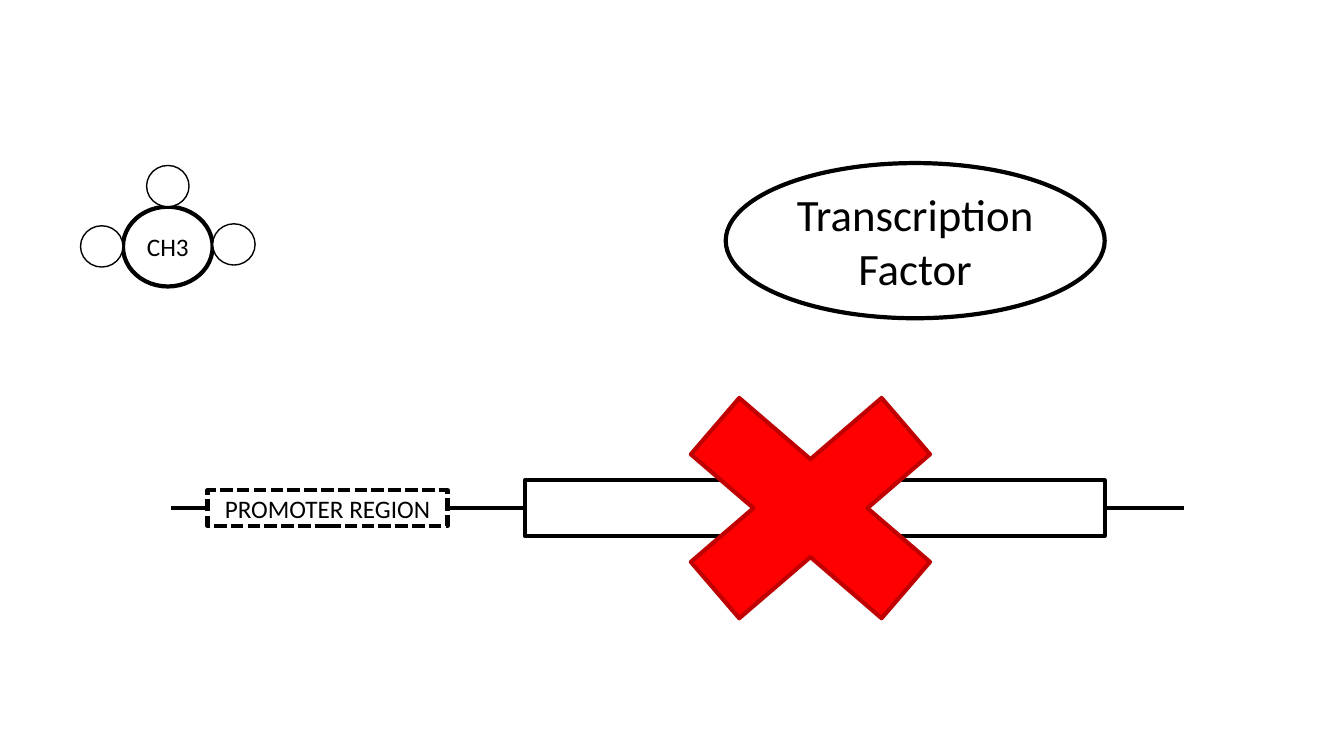
from lxml import etree
from pptx import Presentation
from pptx.dml.color import RGBColor
from pptx.enum.dml import MSO_LINE
from pptx.enum.shapes import MSO_CONNECTOR, MSO_SHAPE
from pptx.enum.text import MSO_ANCHOR, PP_ALIGN
from pptx.oxml.ns import qn
from pptx.util import Cm, Pt

RECT = MSO_SHAPE.RECTANGLE
OVAL = MSO_SHAPE.OVAL
CROSS = MSO_SHAPE.MATH_MULTIPLY
STRAIGHT = MSO_CONNECTOR.STRAIGHT
DASH = MSO_LINE.SQUARE_DOT
MIDDLE = MSO_ANCHOR.MIDDLE
CENTER = PP_ALIGN.CENTER

BLACK = RGBColor(0x00, 0x00, 0x00)
WHITE = RGBColor(0xFF, 0xFF, 0xFF)
RED = RGBColor(0xFF, 0x00, 0x00)
DARK_RED = RGBColor(0xC0, 0x00, 0x00)


def add_outlined(s, kind, x, y, w, h, fill=WHITE, line=BLACK, weight=3):
    sp = s.shapes.add_shape(kind, Cm(x), Cm(y), Cm(w), Cm(h))
    sp.shadow.inherit = False
    if fill is None:
        sp.fill.background()
    else:
        sp.fill.solid()
        sp.fill.fore_color.rgb = fill
    sp.line.color.rgb = line
    sp.line.width = Pt(weight)
    return sp


def set_label(sp, text, size, inset=0):
    tf = sp.text_frame
    tf.text = text
    tf.word_wrap = True
    tf.vertical_anchor = MIDDLE
    tf.margin_left = tf.margin_right = Cm(inset)
    tf.margin_top = tf.margin_bottom = 0
    p = tf.paragraphs[0]
    p.alignment = CENTER
    font = p.runs[0].font
    font.name = "Calibri"
    font.size = Pt(size)
    font.color.rgb = BLACK


def add_methyl_group(s, x, y):
    atom_w, atom_h = 1.07, 1.04
    core_w, core_h = 2.26, 2.01
    core = add_outlined(s, OVAL, x + atom_w, y + atom_h, core_w, core_h)
    set_label(core, "CH3", 18)
    top_x = (atom_w + core_w) / 2
    for dx, dy in ((atom_w + core_w, 1.47), (top_x, 0), (0, 1.52)):
        add_outlined(s, OVAL, x + dx, y + dy, atom_w, atom_h, weight=1)


def add_transcription_factor(s, x, y, w, h):
    sp = add_outlined(s, OVAL, x, y, w, h, fill=None)
    set_label(sp, "Transcription Factor", 32, inset=0.25)


def add_blocked_gene(s, x, y, w, h):
    mid = y + h / 2
    strand = s.shapes.add_connector(STRAIGHT, Cm(x), Cm(mid), Cm(x + w), Cm(mid))
    strand.line.color.rgb = BLACK
    strand.line.width = Pt(3)
    etree.SubElement(strand._element.spPr, qn("a:effectLst"))

    add_outlined(s, RECT, x + 8.91, mid - 0.7, 14.61, 1.4)
    promoter = add_outlined(s, RECT, x + 0.91, mid - 0.45, 6.05, 0.9)
    promoter.line.dash_style = DASH
    set_label(promoter, "PROMOTER REGION", 18)
    add_outlined(s, CROSS, x + 11.48, y, 9.25, h, RED, DARK_RED)


def main():
    prs = Presentation()
    prs.slide_width = Cm(33.87)
    prs.slide_height = Cm(19.05)
    s = prs.slides.add_slide(prs.slide_layouts[6])
    add_methyl_group(s, 2.03, 4.17)
    add_transcription_factor(s, 18.29, 4.11, 9.55, 3.91)
    add_blocked_gene(s, 4.32, 8.83, 25.53, 7.95)
    prs.save("out.pptx")


if __name__ == "__main__":
    main()
